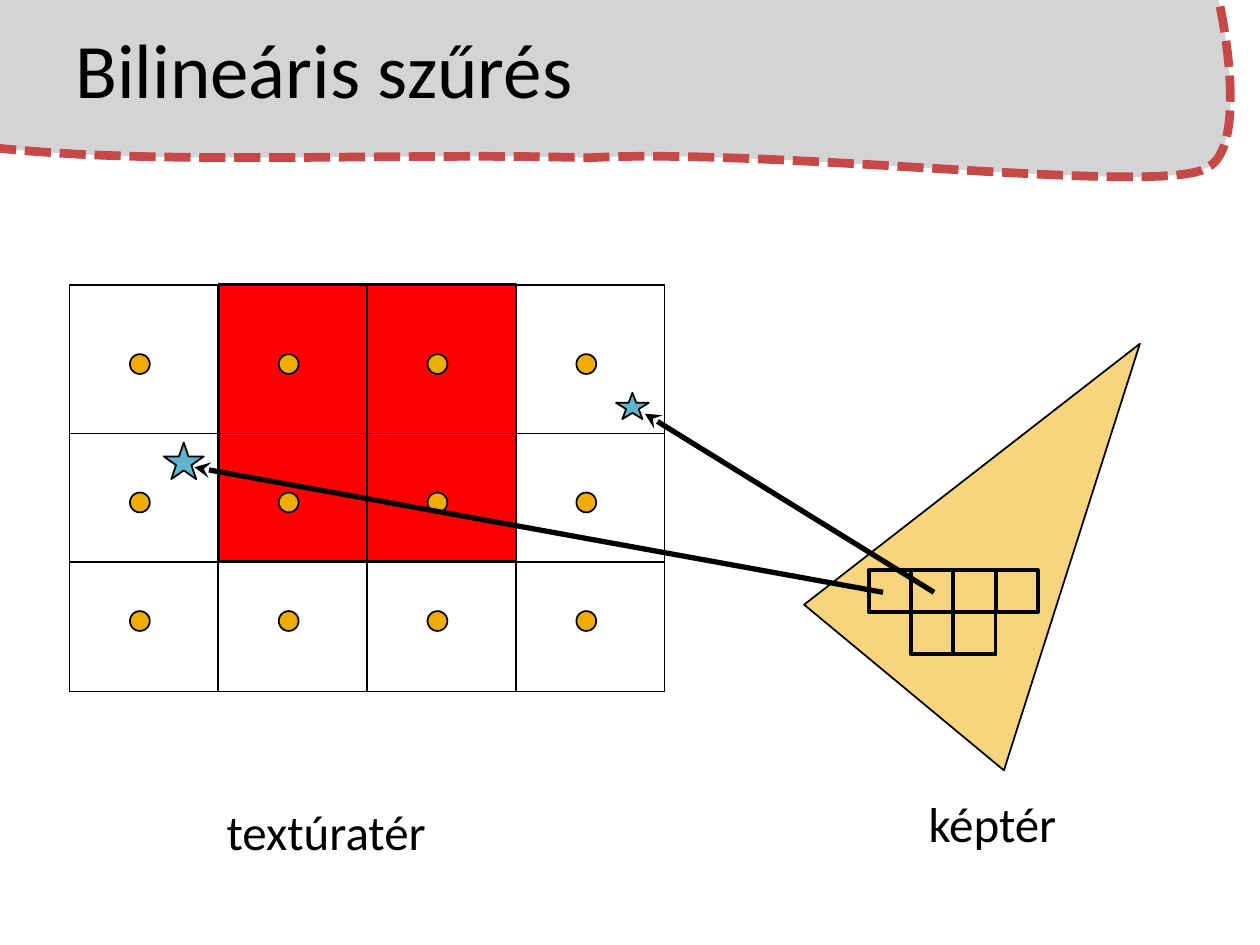
"""Build the bilinear filtering slide: texture space beside image space."""
from dataclasses import dataclass
from itertools import product
from typing import Optional

from lxml.etree import SubElement
from pptx import Presentation
from pptx.dml.color import RGBColor
from pptx.enum.dml import MSO_LINE
from pptx.enum.shapes import MSO_CONNECTOR, MSO_SHAPE as Preset
from pptx.enum.text import MSO_ANCHOR, MSO_AUTO_SIZE
from pptx.oxml.ns import qn
from pptx.util import Cm, Pt

BLACK = RGBColor(0x00, 0x00, 0x00)
RED = RGBColor(0xFF, 0x00, 0x00)
AMBER = RGBColor(0xF0, 0xAD, 0x00)
BLUE = RGBColor(0x60, 0xB5, 0xCC)
GREY = RGBColor(0xD4, 0xD4, 0xD6)
BRICK = RGBColor(0xC6, 0x48, 0x47)

Point = tuple[float, float]

HEADER_START = (-0.2, 2.97)
HEADER_CURVES = (
    ((3.23, 3.35), (7.95, 3.07), (11.86, 3.18)),
    ((15.7, 2.97), (23.52, 3.96), (24.33, 3.38)),
    ((25.27, 2.95), (24.56, -0.38), (24.33, -0.84)),
)
HEADER_CORNER = (-0.2, -0.84)
CURVE_STEPS = 30
TRIANGLE = ((20.24, 15.53), (16.21, 12.19), (22.98, 6.93))

TEXTURE_LEFT, TEXTURE_TOP, TEXEL_WIDTH, TEXTURE_HEIGHT = 1.4, 5.74, 3.0, 8.2
DOT_LEFT, DOT_SIZE = 2.62, 0.4
DOT_TOPS = (7.14, 9.93, 12.32)
PIXEL_LEFT, PIXEL_TOP, PIXEL_SIZE = 17.52, 11.49, 0.85
PIXELS = ((0, 0), (1, 0), (2, 0), (3, 0), (1, 1), (2, 1))


@dataclass(frozen=True)
class Box:
    left: float
    top: float
    width: float
    height: float

    def lengths(self) -> tuple:
        return Cm(self.left), Cm(self.top), Cm(self.width), Cm(self.height)


@dataclass(frozen=True)
class Figure:
    preset: Preset
    box: Box
    fill: Optional[RGBColor] = None
    line_width: float = 1


@dataclass(frozen=True)
class Arrow:
    start: Point
    end: Point


@dataclass(frozen=True)
class Label:
    text: str
    box: Box
    size: float
    frame_format: dict
    paragraph_format: dict


def set_attributes(target, values: dict) -> None:
    for name, value in values.items():
        setattr(target, name, value)


def paint(shape, fill: Optional[RGBColor], line: RGBColor, width: float) -> None:
    shape.shadow.inherit = False
    if fill is None:
        shape.fill.background()
    else:
        shape.fill.solid()
        shape.fill.fore_color.rgb = fill
    shape.line.color.rgb = line
    shape.line.width = Pt(width)


def draw_figure(slide, figure: Figure) -> None:
    shape = slide.shapes.add_shape(figure.preset, *figure.box.lengths())
    paint(shape, figure.fill, BLACK, figure.line_width)


def draw_outline(slide, points: list[Point]):
    start, *others = [(Cm(x), Cm(y)) for x, y in points]
    builder = slide.shapes.build_freeform(*start)
    builder.add_line_segments(others, close=True)
    return builder.convert_to_shape()


def curve_points(start: Point, first: Point, second: Point, end: Point) -> list[Point]:
    points = []
    for step in range(1, CURVE_STEPS + 1):
        t = step / CURVE_STEPS
        weights = ((1 - t) ** 3, 3 * t * (1 - t) ** 2, 3 * t**2 * (1 - t), t**3)
        points.append(tuple(
            sum(weight * value for weight, value in zip(weights, values))
            for values in zip(start, first, second, end)
        ))
    return points


def draw_header(slide) -> None:
    points = [HEADER_START]
    for curve in HEADER_CURVES:
        points += curve_points(points[-1], *curve)
    shape = draw_outline(slide, points + [HEADER_CORNER])
    paint(shape, GREY, BRICK, 5)
    shape.line.dash_style = MSO_LINE.SQUARE_DOT
    shape.line._get_or_add_ln().find(qn("a:prstDash")).set("val", "sysDash")


def draw_triangle(slide) -> None:
    shape = draw_outline(slide, list(TRIANGLE))
    paint(shape, AMBER, BLACK, 1)
    color = shape._element.spPr.find(qn("a:solidFill"))[0]
    SubElement(color, qn("a:alpha"), val="50000")


def draw_arrow(slide, arrow: Arrow) -> None:
    ends = [Cm(value) for value in arrow.start + arrow.end]
    connector = slide.shapes.add_connector(MSO_CONNECTOR.STRAIGHT, *ends)
    connector.line.color.rgb = BLACK
    connector.line.width = Pt(3)
    SubElement(connector.line._get_or_add_ln(), qn("a:tailEnd"), type="stealth")
    SubElement(connector._element.spPr, qn("a:effectLst"))


def draw_label(slide, label: Label) -> None:
    frame = slide.shapes.add_textbox(*label.box.lengths()).text_frame
    set_attributes(frame, label.frame_format)
    paragraph = frame.paragraphs[0]
    set_attributes(paragraph, label.paragraph_format)
    run = paragraph.add_run()
    run.text = label.text
    set_attributes(run.font, {"name": "Calibri", "size": Pt(label.size)})
    run.font.color.rgb = BLACK


def draw_texture(slide) -> None:
    for column in range(4):
        left = TEXTURE_LEFT + column * TEXEL_WIDTH
        box = Box(left, TEXTURE_TOP, TEXEL_WIDTH, TEXTURE_HEIGHT)
        draw_figure(slide, Figure(Preset.RECTANGLE, box))
    middle_row = Box(TEXTURE_LEFT, 8.74, 4 * TEXEL_WIDTH, 2.59)
    draw_figure(slide, Figure(Preset.RECTANGLE, middle_row))
    for top, column in product(DOT_TOPS, range(4)):
        box = Box(DOT_LEFT + column * TEXEL_WIDTH, top, DOT_SIZE, DOT_SIZE)
        draw_figure(slide, Figure(Preset.OVAL, box, AMBER))


def draw_pixels(slide) -> None:
    for column, row in PIXELS:
        left, top = PIXEL_LEFT + column * PIXEL_SIZE, PIXEL_TOP + row * PIXEL_SIZE
        box = Box(left, top, PIXEL_SIZE, PIXEL_SIZE)
        draw_figure(slide, Figure(Preset.RECTANGLE, box, line_width=2.25))


def main() -> None:
    presentation = Presentation()
    set_attributes(presentation, {"slide_width": Cm(25.4), "slide_height": Cm(19.05)})
    slide = presentation.slides.add_slide(presentation.slide_layouts[6])
    title_frame = {"word_wrap": True, "vertical_anchor": MSO_ANCHOR.MIDDLE}
    caption_frame = {"word_wrap": False, "auto_size": MSO_AUTO_SIZE.SHAPE_TO_FIT_TEXT}

    draw_header(slide)
    draw_figure(slide, Figure(Preset.RECTANGLE, Box(4.42, 5.72, 5.99, 5.59), RED))
    draw_label(slide, Label("Bilineáris szűrés", Box(1.27, 0, 22.86, 3.18), 44,
                            title_frame, {"line_spacing": Pt(40)}))
    draw_texture(slide)
    draw_figure(slide, Figure(Preset.STAR_5_POINT, Box(3.3, 8.92, 0.81, 0.74), BLUE))
    draw_triangle(slide)
    draw_pixels(slide)
    draw_arrow(slide, Arrow((17.8, 11.94), (3.92, 9.42)))
    draw_figure(slide, Figure(Preset.STAR_5_POINT, Box(12.42, 7.92, 0.66, 0.53), BLUE))
    draw_arrow(slide, Arrow((18.83, 11.94), (13.0, 8.34)))
    for text, box in (("textúratér", Box(4.32, 16.03, 4.57, 1.45)),
                      ("képtér", Box(18.47, 15.88, 3.12, 1.45))):
        draw_label(slide, Label(text, box, 28, caption_frame, {}))
    presentation.save("out.pptx")


if __name__ == "__main__":
    main()
